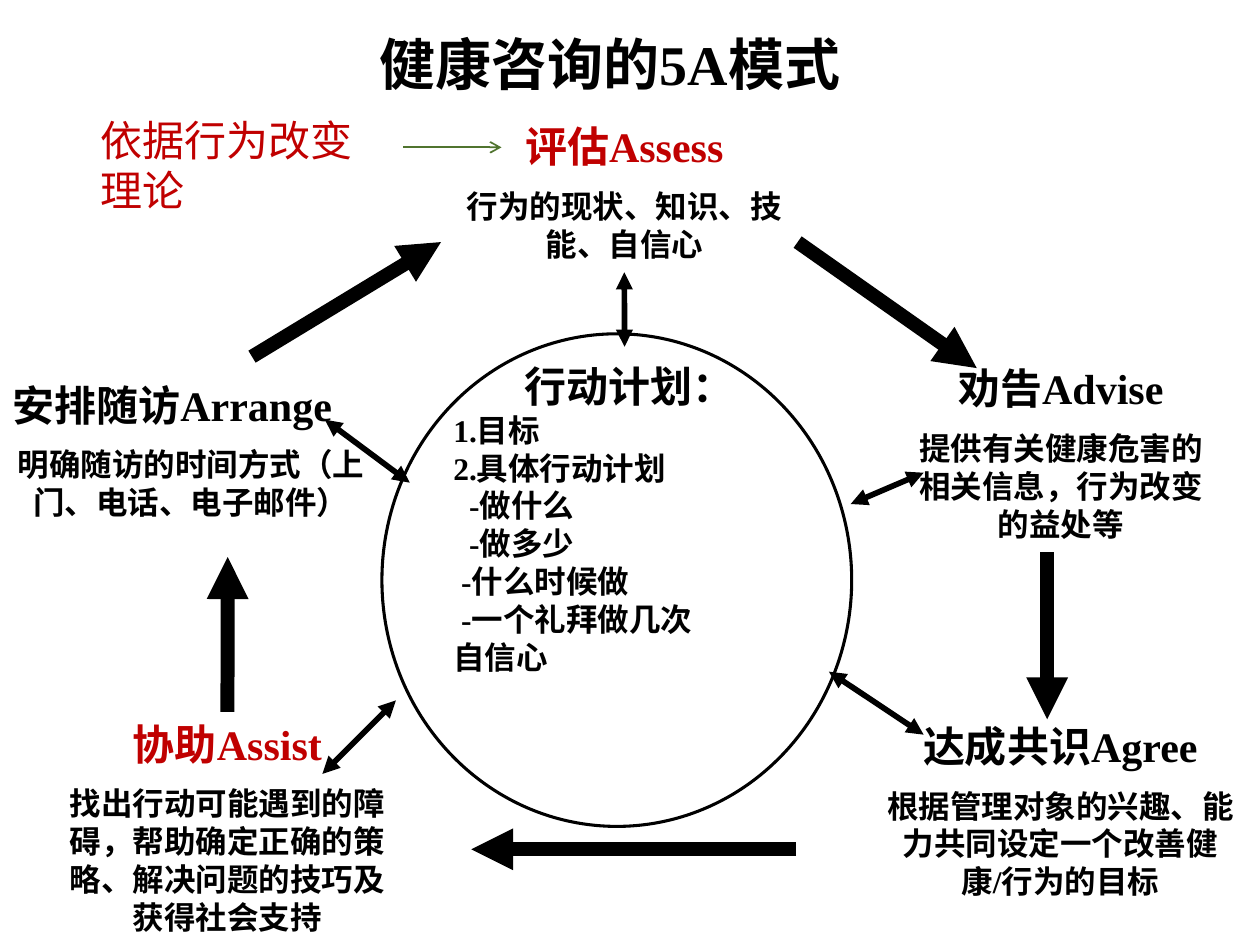
import pptx
import pptx.dml.color
import pptx.enum.shapes
import pptx.enum.text
import pptx.oxml
import pptx.oxml.ns
import pptx.util

Cm = pptx.util.Cm
Pt = pptx.util.Pt
ALIGN = pptx.enum.text.PP_ALIGN
COLORS = {"ink": "000000", "accent": "C00000", "green": "50742F"}
FONT = "Times New Roman"
HEADING_SIZE = 24
BODY_SIZE = 18
SPACE_WIDTH = 4.5

STEPS = {
    "assess": ((8.89, 2.31, 7.39, 3.18), "评估Assess", "accent", ALIGN.CENTER,
               "行为的现状、知识、技能、自信心"),
    "advise": ((18.21, 7.19, 6.35, 3.94), "劝告Advise", "ink", ALIGN.CENTER,
               "提供有关健康危害的相关信息，行为改变的益处等"),
    "agree": ((17.35, 14.4, 8.05, 3.94), "达成共识Agree", "ink", ALIGN.CENTER,
              "根据管理对象的兴趣、能力共同设定一个改善健康/行为的目标"),
    "assist": ((1.09, 14.35, 6.99, 4.7), "协助Assist", "accent", ALIGN.CENTER,
               "找出行动可能遇到的障碍，帮助确定正确的策略、解决问题的技巧及获得社会支持"),
    "arrange": ((0, 7.52, 7.7, 3.18), "安排随访Arrange", "ink", ALIGN.LEFT,
                "明确随访的时间方式（上门、电话、电子邮件）"),
}
PLAN_LINES = [
    ("1.目标", 0), ("2.具体行动计划", 0), ("-做什么", 2), ("-做多少", 2),
    ("-什么时候做", 1), ("-一个礼拜做几次", 1), ("自信心", 0),
]
CYCLE_ARROWS = [
    (16.08, 4.88, 19.69, 7.42),
    (21.11, 11.13, 21.11, 14.5),
    (16.05, 17.12, 9.5, 17.12),
    (5.08, 7.19, 8.89, 4.88),
]
PLAN_LINKS = [
    (18.62, 9.53, 17.15, 10.16),
    (6.55, 8.46, 8.26, 9.73),
    (7.98, 14.12, 6.5, 15.6),
    (16.71, 13.54, 18.62, 14.81),
]


def color(name):
    return pptx.dml.color.RGBColor.from_string(COLORS[name])


def add_box(page, place, grow=True):
    box = page.shapes.add_textbox(*map(Cm, place))
    box.text_frame.word_wrap = True
    if grow:
        box.text_frame.auto_size = pptx.enum.text.MSO_AUTO_SIZE.SHAPE_TO_FIT_TEXT
    return box


def add_para(box, text, size, ink="ink", align=ALIGN.LEFT, bold=True, before=0, indent=0):
    frame = box.text_frame
    para = frame.add_paragraph() if frame.paragraphs[0].runs else frame.paragraphs[0]
    para.alignment = align
    if before:
        para.space_before = Pt(before)
    if indent:
        properties = para._p.get_or_add_pPr()
        properties.set("marL", str(int(Pt(indent))))
        properties.set("indent", "0")
    span = para.add_run()
    span.text = text
    span.font.name = FONT
    span.font.size = Pt(size)
    span.font.bold = bold
    span.font.color.rgb = color(ink)


def add_step(page, place, heading, ink, align, detail):
    box = add_box(page, place)
    add_para(box, heading, HEADING_SIZE, ink, align)
    add_para(box, detail, BODY_SIZE, align=ALIGN.CENTER, before=BODY_SIZE / 2)
    return box


def add_plan(page):
    box = add_box(page, (8.89, 7.14, 7.59, 7.57))
    add_para(box, "行动计划：", HEADING_SIZE, align=ALIGN.CENTER)
    for text, level in PLAN_LINES:
        add_para(box, text, BODY_SIZE, indent=level * SPACE_WIDTH)
    circle = page.shapes.add_shape(
        pptx.enum.shapes.MSO_SHAPE.OVAL, *map(Cm, (7.7, 6.73, 9.47, 9.93)))
    circle.shadow.inherit = False
    circle.fill.background()
    circle.line.color.rgb = color("ink")
    circle.line.width = Pt(1.75)


def add_arrow(page, ends, width, ink="ink", head=None, tail="triangle"):
    arrow = page.shapes.add_connector(
        pptx.enum.shapes.MSO_CONNECTOR.STRAIGHT, *map(Cm, ends))
    arrow.line.color.rgb = color(ink)
    arrow.line.width = Pt(width)
    line = arrow.line._get_or_add_ln()
    for tag, kind in (("a:headEnd", head), ("a:tailEnd", tail)):
        if kind:
            end = pptx.oxml.xmlchemy.OxmlElement(tag)
            end.set("type", kind)
            line.append(end)
    arrow._element.spPr.append(pptx.oxml.xmlchemy.OxmlElement("a:effectLst"))
    return arrow


def main():
    deck = pptx.Presentation()
    deck.slide_width = Cm(25.4)
    deck.slide_height = Cm(19.05)
    page = deck.slides.add_slide(deck.slide_layouts[6])

    title = add_box(page, (1.5, 0, 21.59, 2.54), grow=False)
    title.text_frame.vertical_anchor = pptx.enum.text.MSO_ANCHOR.MIDDLE
    add_para(title, "健康咨询的5A模式", 32, align=ALIGN.CENTER)

    steps = {name: add_step(page, *step) for name, step in STEPS.items()}
    add_plan(page)

    for ends in CYCLE_ARROWS:
        add_arrow(page, ends, 8)
    assist_arrow = add_arrow(page, (4.59, 14.35, 4.59, 11.23), 8)
    assist_arrow.begin_connect(steps["assist"], 0)

    for ends in PLAN_LINKS:
        add_arrow(page, ends, 3.25, head="triangle")
    assess_link = add_arrow(page, (12.59, 5.49, 12.59, 6.99), 3.25, head="triangle")
    assess_link.begin_connect(steps["assess"], 2)

    theory = add_box(page, (1.78, 2.18, 6.15, 2.31))
    add_para(theory, "依据行为改变理论", HEADING_SIZE, "accent", bold=False)
    add_arrow(page, (8.13, 2.97, 10.11, 2.97), 1, "green", tail="arrow")

    deck.save("out.pptx")


if __name__ == "__main__":
    main()
